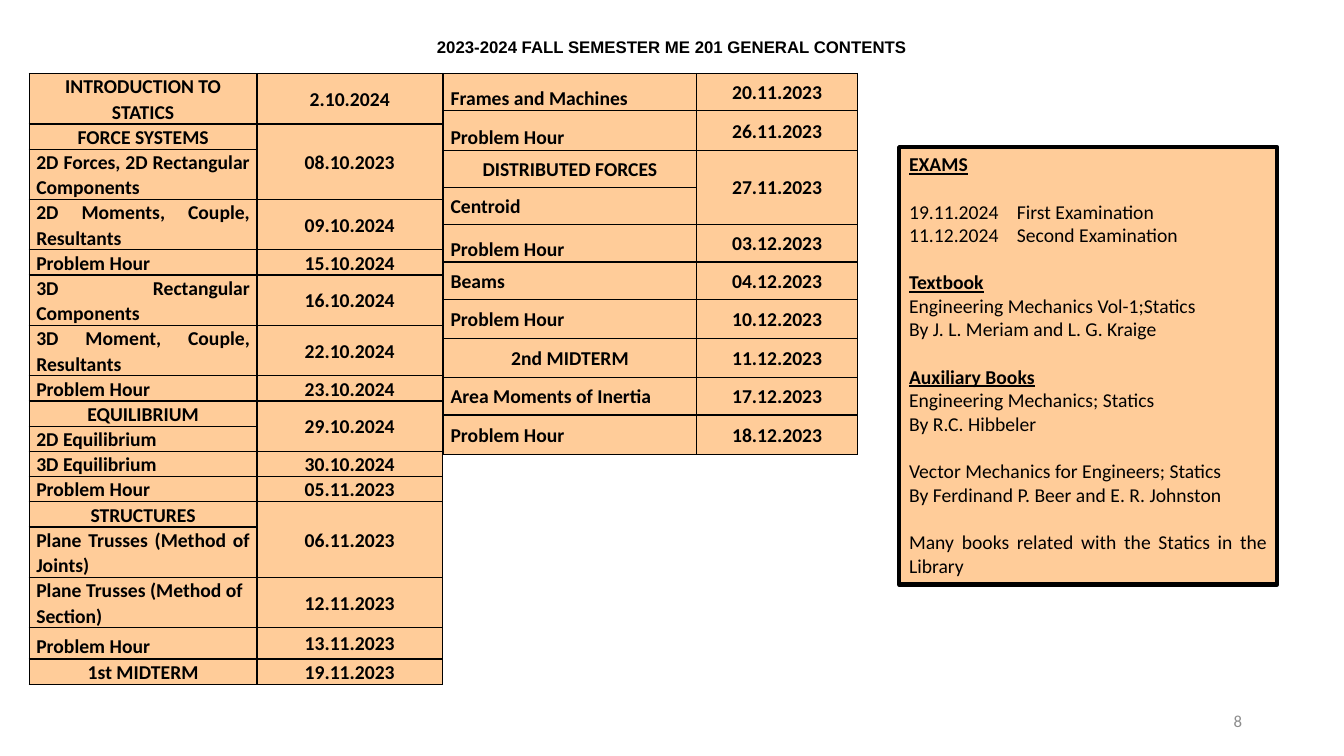
import pptx
import pptx.dml.color
import pptx.enum.shapes
import pptx.enum.text
import pptx.util
from lxml import etree
from pptx.oxml.ns import qn

COLORS = {"ink": "000000", "peach": "FFCC99", "muted": "8C8C8C"}
ALIGN = pptx.enum.text.PP_ALIGN
ANCHOR = pptx.enum.text.MSO_ANCHOR
SHARED = None  # date cell joined with the one above

# How the topic cell of a row is set: paragraph alignment and anchor
HEADING = (ALIGN.CENTER, ANCHOR.MIDDLE)
TOPIC = (ALIGN.JUSTIFY, ANCHOR.MIDDLE)
LOW = (ALIGN.LEFT, ANCHOR.BOTTOM)

FIRST_HALF = [
    ("INTRODUCTION TO STATICS", HEADING, "2.10.2024", 2.3),
    ("FORCE SYSTEMS", HEADING, "08.10.2023", 2.2),
    ("2D Forces, 2D Rectangular Components", TOPIC, SHARED, 4.3),
    ("2D Moments, Couple, Resultants", TOPIC, "09.10.2024", 2.2),
    ("Problem Hour", TOPIC, "15.10.2024", 2.3),
    ("3D Rectangular Components", TOPIC, "16.10.2024", 2.2),
    ("3D Moment, Couple, Resultants", TOPIC, "22.10.2024", 2.2),
    ("Problem Hour", TOPIC, "23.10.2024", 2.3),
    ("EQUILIBRIUM", HEADING, "29.10.2024", 2.2),
    ("2D Equilibrium", LOW, SHARED, 2.2),
    ("3D Equilibrium", LOW, "30.10.2024", 2.2),
    ("Problem Hour", LOW, "05.11.2023", 2.3),
    ("STRUCTURES", HEADING, "06.11.2023", 2.2),
    ("Plane Trusses (Method of Joints)", TOPIC, SHARED, 2.2),
    ("Plane Trusses (Method of Section)", LOW, "12.11.2023", 2.2),
    ("Problem Hour", LOW, "13.11.2023", 3.1),
    ("1st MIDTERM", HEADING, "19.11.2023", 2.3),
]
SECOND_HALF = [
    ("Frames and Machines", LOW, "20.11.2023", 3.7),
    ("Problem Hour", LOW, "26.11.2023", 3.9),
    ("DISTRIBUTED FORCES", HEADING, "27.11.2023", 3.7),
    ("Centroid", TOPIC, SHARED, 3.7),
    ("Problem Hour", LOW, "03.12.2023", 3.7),
    ("Beams", TOPIC, "04.12.2023", 3.7),
    ("Problem Hour", TOPIC, "10.12.2023", 3.9),
    ("2nd MIDTERM", HEADING, "11.12.2023", 3.9),
    ("Area Moments of Inertia", TOPIC, "17.12.2023", 3.7),
    ("Problem Hour", TOPIC, "18.12.2023", 3.9),
]
# Blocks of lines with a line's gap between them; True marks a titled block
REFERENCES = [
    (True, ["EXAMS"]),
    (False, ["19.11.2024\tFirst Examination", "11.12.2024\tSecond Examination"]),
    (True, ["Textbook", "Engineering Mechanics Vol-1;Statics",
            "By J. L. Meriam and L. G. Kraige"]),
    (True, ["Auxiliary Books", "Engineering Mechanics; Statics", "By R.C. Hibbeler"]),
    (False, ["Vector Mechanics for Engineers; Statics",
             "By Ferdinand P. Beer and E. R. Johnston"]),
    (False, ["Many books related with the Statics in the Library"]),
]


def cells(count):
    """Length of a number of grid cells, ten to the inch."""
    return pptx.util.Inches(count / 10)


def rgb(color):
    return pptx.dml.color.RGBColor.from_string(COLORS[color])


def apply(target, values):
    for attribute, value in values.items():
        setattr(target, attribute, value)


class SyllabusSlide:
    body = {"name": "Calibri", "size": pptx.util.Pt(14)}
    cell_spacing = {"line_spacing": 1.07, "space_after": pptx.util.Pt(8)}
    cell_margins = {"margin_left": cells(0.7), "margin_right": cells(0.7),
                    "margin_top": 0, "margin_bottom": 0}
    block_gap = pptx.util.Pt(17)
    exam_tab = cells(10.7)

    def __init__(self, deck):
        self.slide = deck.slides.add_slide(deck.slide_layouts[6])

    def set_text(self, paragraph, wording, color="ink", layout={}, **font):
        run = paragraph.add_run()
        run.text = wording
        apply(run.font, {**self.body, **font})
        run.font.color.rgb = rgb(color)
        apply(paragraph, layout)

    def label(self, box, wording, align, wrap=True, **style):
        frame = self.slide.shapes.add_textbox(*map(cells, box)).text_frame
        apply(frame, {"word_wrap": wrap, "vertical_anchor": ANCHOR.MIDDLE})
        self.set_text(frame.paragraphs[0], wording, layout={"alignment": align},
                      size=pptx.util.Pt(12), **style)

    def border(self, cell):
        properties = cell._tc.get_or_add_tcPr()
        for side in ("a:lnL", "a:lnR", "a:lnT", "a:lnB"):
            edge = etree.SubElement(properties, qn(side), w=str(pptx.util.Pt(1)))
            paint = etree.SubElement(edge, qn("a:solidFill"))
            etree.SubElement(paint, qn("a:srgbClr"), val=COLORS["ink"])

    def fill_cell(self, cell, wording, align, anchor):
        self.border(cell)
        cell.fill.solid()
        cell.fill.fore_color.rgb = rgb("peach")
        apply(cell, {**self.cell_margins, "vertical_anchor": anchor})
        if wording is not SHARED:
            self.set_text(cell.text_frame.paragraphs[0], wording, bold=True,
                          layout={**self.cell_spacing, "alignment": align})

    def schedule(self, left, top, widths, lessons):
        height = sum(lesson[-1] for lesson in lessons)
        table = self.slide.shapes.add_table(
            len(lessons), len(widths), *map(cells, (left, top, sum(widths), height))).table
        apply(table, {"first_row": False, "horz_banding": False})
        for column, width in zip(table.columns, widths):
            column.width = cells(width)
        for index, (topic, (align, anchor), date, row_height) in enumerate(lessons):
            table.rows[index].height = cells(row_height)
            self.fill_cell(table.cell(index, 0), topic, align, anchor)
            self.fill_cell(table.cell(index, 1), date, *HEADING)
            if date is SHARED:
                table.cell(index - 1, 1).merge(table.cell(index, 1))

    def reference_panel(self, box, blocks):
        panel = self.slide.shapes.add_shape(
            pptx.enum.shapes.MSO_SHAPE.RECTANGLE, *map(cells, box))
        panel.shadow.inherit = False
        panel.fill.solid()
        panel.fill.fore_color.rgb = rgb("peach")
        panel.line.color.rgb = rgb("ink")
        panel.line.width = pptx.util.Pt(3)
        frame = panel.text_frame
        apply(frame, {"word_wrap": True, "vertical_anchor": ANCHOR.TOP})
        for block_index, (titled, lines) in enumerate(blocks):
            for line_index, wording in enumerate(lines):
                opening = block_index == line_index == 0
                paragraph = frame.paragraphs[0] if opening else frame.add_paragraph()
                title = titled and line_index == 0
                gap = self.block_gap if block_index and line_index == 0 else 0
                self.set_text(paragraph, wording, bold=title, underline=title, layout={
                    "alignment": ALIGN.LEFT if opening else ALIGN.JUSTIFY,
                    "space_before": gap})
                if "\t" in wording:
                    self.tab_stop(paragraph)

    def tab_stop(self, paragraph):
        stops = etree.SubElement(paragraph._p.get_or_add_pPr(), qn("a:tabLst"))
        etree.SubElement(stops, qn("a:tab"), pos=str(self.exam_tab), algn="l")


def main():
    deck = pptx.Presentation()
    apply(deck, {"slide_width": cells(133.33), "slide_height": cells(75)})
    syllabus = SyllabusSlide(deck)
    syllabus.label((94.2, 69.5, 30, 4), "8", ALIGN.RIGHT, color="muted")
    syllabus.label((41.9, 3.1, 49.5, 3), "2023-2024 FALL SEMESTER ME 201 GENERAL CONTENTS",
                   ALIGN.CENTER, wrap=False, name="Arial", bold=True)
    syllabus.reference_panel((89.2, 14.6, 37.5, 43.4), REFERENCES)
    syllabus.schedule(2.9, 7.3, (22.6, 18.4), FIRST_HALF)
    syllabus.schedule(44, 7.3, (25.1, 16), SECOND_HALF)
    deck.save("out.pptx")


if __name__ == "__main__":
    main()
